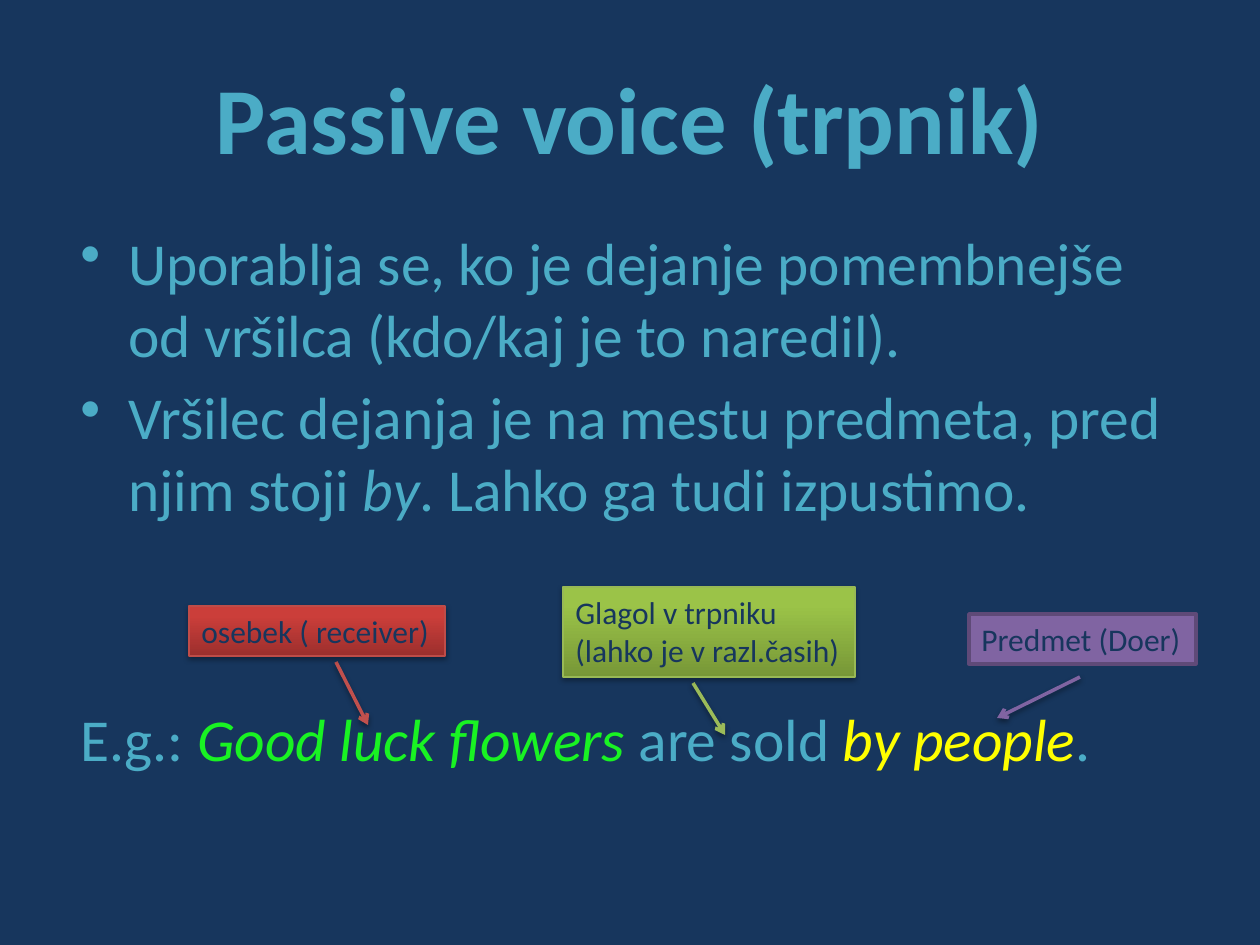
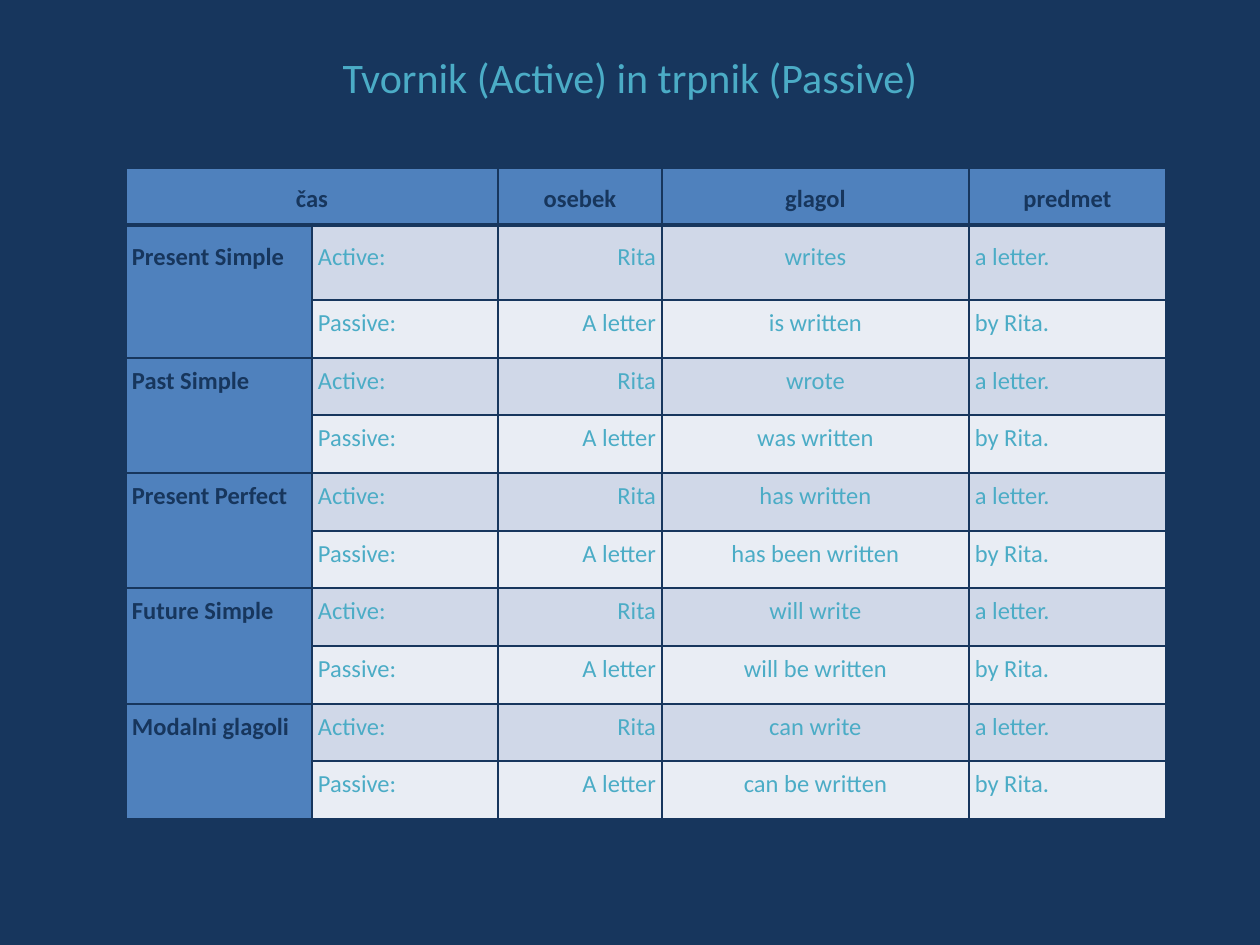
from lxml import etree
from pptx import Presentation
from pptx.dml.color import RGBColor
from pptx.enum.shapes import MSO_CONNECTOR as CONN, MSO_SHAPE as SHAPE
from pptx.enum.text import MSO_ANCHOR as ANCHOR, MSO_AUTO_SIZE as AUTO, PP_ALIGN as ALIGN
from pptx.oxml.ns import qn
from pptx.util import Emu, Pt

PX = 914400 / 126
NAVY, TEAL, GREEN, YELLOW = "17365D", "4BACC6", "19F323", "FFFF00"
BLUE, BAND_DARK, BAND_LIGHT = "4F81BD", "D0D8E8", "E9EDF4"


def px(n):
    return Emu(round(n * PX))


def rgb(color):
    return RGBColor.from_string(color)


def sub(parent, tag, **attrs):
    return etree.SubElement(parent, qn(tag), {k: str(v) for k, v in attrs.items()})


class Deck:
    font = "Calibri"

    def __init__(self, width, height):
        self.prs = Presentation()
        self.prs.slide_width, self.prs.slide_height = px(width), px(height)

    def slide(self):
        self.s = self.prs.slides.add_slide(self.prs.slide_layouts[6])
        fill = self.s.background.fill
        fill.solid()
        fill.fore_color.rgb = rgb(NAVY)

    def style(self, p, size, color, bold=False, align=ALIGN.LEFT):
        f = p.font
        f.name, f.size, f.bold = self.font, Pt(size), bold
        f.color.rgb = rgb(color)
        p.alignment = align

    def frame(self, *box):
        tf = self.s.shapes.add_textbox(*map(px, box)).text_frame
        tf.word_wrap = True
        return tf

    def title(self, text, height, size, bold=False):
        tf = self.frame(63, 38, 1134, height)
        tf.vertical_anchor = ANCHOR.MIDDLE
        p = tf.paragraphs[0]
        p.text = text
        self.style(p, size, TEAL, bold, ALIGN.CENTER)

    def body(self, box, paragraphs, size):
        """Each paragraph is (bullet, space before, [(text, italic colour or None)])."""
        tf = self.frame(*box)
        for i, (bullet, before, runs) in enumerate(paragraphs):
            p = tf.add_paragraph() if i else tf.paragraphs[0]
            self.style(p, size, TEAL)
            p.space_before = Pt(before)
            pPr = p._p.get_or_add_pPr()
            pPr.set("marL", str(px(48)))
            pPr.set("indent", str(-px(48)))
            if bullet:
                bu = etree.Element(qn("a:buChar"), char="•")
                pPr.insert_element_before(bu, "a:tabLst", "a:defRPr")
            for text, accent in runs:
                r = p.add_run()
                r.text = text
                f = r.font
                f.name, f.size, f.italic = self.font, Pt(size), accent is not None
                f.color.rgb = rgb(accent or TEAL)

    def shadow(self, shape, opacity):
        shape_props = shape._element.spPr
        for old in shape_props.findall(qn("a:effectLst")):
            shape_props.remove(old)
        outer = sub(sub(shape_props, "a:effectLst"), "a:outerShdw", blurRad=Pt(3.1),
                    dist=Pt(1.7), dir=5400000, rotWithShape=0)
        sub(sub(outer, "a:srgbClr", val="000000"), "a:alpha", val=opacity * 1000)

    def label(self, box, lines, fills, line, line_width):
        """One fill is flat; two run from the bottom to the top with a soft shadow."""
        sp = self.s.shapes.add_shape(SHAPE.RECTANGLE, *map(px, box))
        sp.shadow.inherit = False
        sp.line.color.rgb, sp.line.width = rgb(line), Pt(line_width)
        if len(fills) == 1:
            sp.fill.solid()
            sp.fill.fore_color.rgb = rgb(fills[0])
        else:
            sp.fill.gradient()
            sp.fill.gradient_angle = 90
            for stop, color, at in zip(sp.fill.gradient_stops, fills, (0, 0.8)):
                stop.color.rgb, stop.position = rgb(color), at
            self.shadow(sp, 35)
        tf = sp.text_frame
        tf.word_wrap, tf.auto_size = False, AUTO.SHAPE_TO_FIT_TEXT
        tf.vertical_anchor = ANCHOR.TOP
        tf.text = "\n".join(lines)
        for p in tf.paragraphs:
            self.style(p, 18, NAVY)

    def arrow(self, ends, color):
        c = self.s.shapes.add_connector(CONN.STRAIGHT, *map(px, ends))
        c.line.color.rgb, c.line.width = rgb(color), Pt(2)
        sub(c.line._get_or_add_ln(), "a:tailEnd", type="arrow")
        self.shadow(c, 38)

    def table(self, left, top, cols, rows):
        shape = self.s.shapes.add_table(len(rows), len(cols), px(left), px(top),
                                        px(sum(cols)), px(sum(rows)))
        t = shape.table
        t.first_row = t.horz_banding = False
        for col, width in zip(t.columns, cols):
            col.width = px(width)
        for row, height in zip(t.rows, rows):
            row.height = px(height)
        return t

    def cell(self, cell, text, fill, color, bold, align, top=4, borders=(1, 1, 1, 1)):
        cell.fill.solid()
        cell.fill.fore_color.rgb = rgb(fill)
        cell.margin_left = cell.margin_right = px(6)
        cell.margin_top, cell.margin_bottom = px(top), px(4)
        tcPr = cell._tc.get_or_add_tcPr()
        for i, (side, width) in enumerate(zip("LRTB", borders)):
            ln = etree.Element(qn("a:ln" + side), w=str(Pt(width)))
            sub(sub(ln, "a:solidFill"), "a:srgbClr", val=NAVY)
            tcPr.insert(i, ln)
        p = cell.text_frame.paragraphs[0]
        p.text = text
        p.line_spacing = 1.15
        self.style(p, 14, color, bold, align)


def passive_voice(d):
    d.slide()
    d.title("Passive voice (trpnik)", 158, 54, bold=True)
    d.body((68, 220, 1134, 624), [
        (True, 6.5, [("Uporablja se, ko je dejanje pomembnejše od vršilca (kdo/kaj je to naredil).", None)]),
        (True, 6.5, [("Vršilec dejanja je na mestu predmeta, pred njim stoji ", None), ("by", TEAL),
                     (". Lahko ga tudi izpustimo.", None)]),
        (False, 102, [("E.g.: ", None), ("Good luck flowers ", GREEN), ("are sold ", None),
                      ("by people", YELLOW), (".", None)]),
    ], 34)

    # Sentence parts, each with an arrow to its words
    d.arrow((1080, 677, 997, 718), "8064A2")
    d.label((969, 614, 227, 50), ["Predmet (Doer)"], ["8064A2"], "5F4A78", 2)
    d.arrow((693, 683, 725, 735), "9BBB59")
    d.label((563, 587, 292, 90), ["Glagol v trpniku", "(lahko je v razl.časih)"],
            ["779737", "9BC348"], "98B955", 0.75)
    d.arrow((336, 662, 368, 725), "C0504D")
    d.label((189, 606, 256, 50), ["osebek ( receiver)"], ["9C2F2D", "CB3E3A"], "BF4C48", 0.75)


def active_and_passive(d):
    d.slide()
    d.title("Tvornik (Active) in trpnik (Passive)", 78, 24)
    tenses = [
        ("Present Simple", "writes", "is written"),
        ("Past Simple", "wrote", "was written"),
        ("Present Perfect", "has written", "has been written"),
        ("Future Simple", "will write", "will be written"),
        ("Modalni glagoli", "can write", "can be written"),
    ]
    t = d.table(126, 168, [186, 186, 164, 307, 197], [57, 75] + [58, 57, 58] * 3)

    # Header
    for col, text in enumerate(["čas", "", "osebek", "glagol", "predmet"]):
        c = t.cell(0, col)
        d.cell(c, text, BLUE, NAVY, True, ALIGN.CENTER, borders=(1, 1, 1, 3))
        c.vertical_anchor = ANCHOR.MIDDLE
    t.cell(0, 0).merge(t.cell(0, 1))

    # Two rows for each tense
    aligns = [ALIGN.LEFT, ALIGN.RIGHT, ALIGN.CENTER, ALIGN.LEFT]
    for i, (tense, active, passive) in enumerate(tenses):
        first = 2 * i + 1
        voices = [(BAND_DARK, ["Active:", "Rita", active, "a letter."]),
                  (BAND_LIGHT, ["Passive:", "A letter", passive, "by Rita."])]
        for row, (fill, texts) in enumerate(voices, first):
            look = {"top": 13, "borders": (1, 1, 3, 1)} if row == 1 else {}
            d.cell(t.cell(row, 0), tense if row == first else "", BLUE, NAVY, True,
                   ALIGN.LEFT, **look)
            for col, (text, align) in enumerate(zip(texts, aligns), 1):
                d.cell(t.cell(row, col), text, fill, TEAL, False, align, **look)
        t.cell(first, 0).merge(t.cell(first + 1, 0))


def main():
    d = Deck(1260, 945)
    passive_voice(d)
    active_and_passive(d)
    d.prs.save("out.pptx")


if __name__ == "__main__":
    main()
